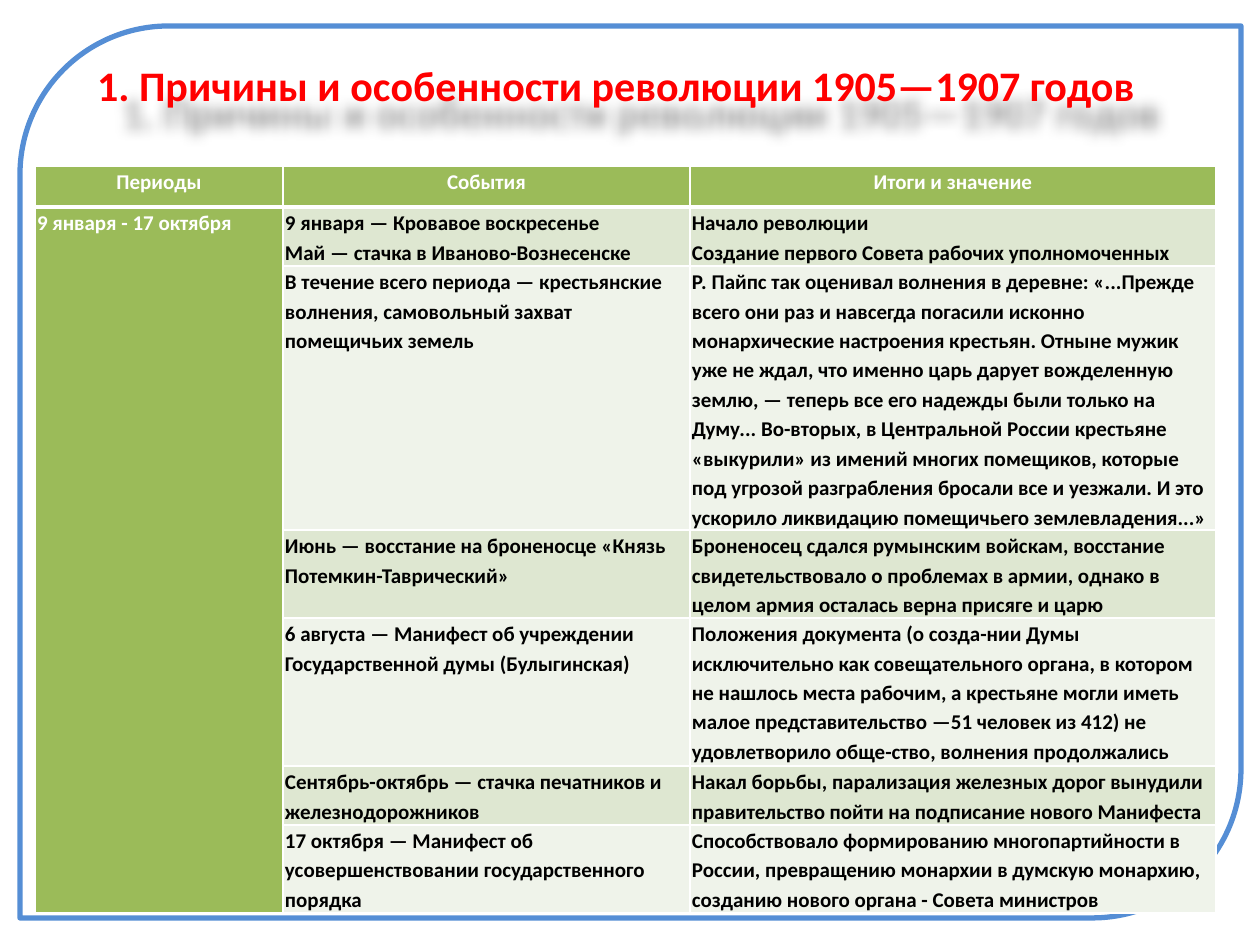
from dataclasses import dataclass

from lxml import etree
from pptx import Presentation
from pptx.dml.color import RGBColor
from pptx.enum.shapes import MSO_SHAPE
from pptx.enum.text import MSO_ANCHOR, PP_ALIGN
from pptx.oxml.ns import qn
from pptx.util import Pt

FRAME_SHAPE = MSO_SHAPE.ROUND_2_DIAG_RECTANGLE
CENTER, LEFT = PP_ALIGN.CENTER, PP_ALIGN.LEFT
MIDDLE = MSO_ANCHOR.MIDDLE

TITLE = "1. Причины и особенности революции 1905—1907 годов"
HEADERS = ["Периоды", "События", "Итоги и значение"]
PERIOD = "9 января - 17 октября"
EVENTS = [  # event, outcome; a line break starts a new paragraph
    ("9 января — Кровавое воскресенье\nМай — стачка в Иваново-Вознесенске",
     "Начало революции\nСоздание первого Совета рабочих уполномоченных"),
    ("В течение всего периода — крестьянские волнения, самовольный захват "
     "помещичьих земель",
     "Р. Пайпс так оценивал волнения в деревне: «...Прежде всего они раз и "
     "навсегда погасили исконно монархические настроения крестьян. Отныне мужик "
     "уже не ждал, что именно царь дарует вожделенную землю, — теперь все его "
     "надежды были только на Думу... Во-вторых, в Центральной России крестьяне "
     "«выкурили» из имений многих помещиков, которые под угрозой разграбления "
     "бросали все и уезжали. И это ускорило ликвидацию помещичьего "
     "землевладения...»"),
    ("Июнь — восстание на броненосце «Князь Потемкин-Таврический»",
     "Броненосец сдался румынским войскам, восстание свидетельствовало о "
     "проблемах в армии, однако в целом армия осталась верна присяге и царю"),
    ("6 августа — Манифест об учреждении Государственной думы (Булыгинская)",
     "Положения документа (о созда-нии Думы исключительно как совещательного "
     "органа, в котором не нашлось места рабочим, а крестьяне могли иметь малое "
     "представительство —51 человек из 412) не удовлетворило обще-ство, "
     "волнения продолжались"),
    ("Сентябрь-октябрь — стачка печатников и железнодорожников",
     "Накал борьбы, парализация железных дорог вынудили правительство пойти на "
     "подписание нового Манифеста"),
    ("17 октября — Манифест об усовершенствовании государственного порядка",
     "Способствовало формированию многопартийности в России, превращению "
     "монархии в думскую монархию, созданию нового органа - Совета министров"),
]

# Geometry in px, 126 px to the inch
SLIDE = (1260, 945)
FRAME_BOX = (20, 26, 1221, 892)
TITLE_BOX = (49, 45, 1134, 79)
TABLE_ORIGIN = (35, 166)
COLUMNS = [248, 407, 526]
HEADER_HEIGHT = 41
EVENT_HEIGHTS = [59, 264, 88, 148, 59, 88]
CELL_INSET = 2


@dataclass(frozen=True)
class Theme:
    font: str = "Calibri"
    title_size: int = 24
    table_size: int = 12
    line_spacing: float = 1.15
    title: str = "FF0000"
    frame: str = "558ED5"
    accent: str = "9BBB59"
    bands: tuple = ("DEE7D1", "EFF3EA")
    light: str = "FFFFFF"
    dark: str = "000000"


THEME = Theme()


def px(value):
    return round(value * 914400 / 126)


def rgb(color):
    return RGBColor.from_string(color)


def write(text_frame, text, size, color, align, spacing=1.0):
    text_frame.word_wrap = True
    text_frame.text = text
    for paragraph in text_frame.paragraphs:
        paragraph.alignment = align
        paragraph.line_spacing = spacing
        paragraph.font.name = THEME.font
        paragraph.font.size = Pt(size)
        paragraph.font.bold = True
        paragraph.font.color.rgb = rgb(color)


def add_soft_shadow(shape):
    effects = etree.SubElement(shape._element.spPr, qn("a:effectLst"))
    shadow = etree.SubElement(
        effects, qn("a:outerShdw"), blurRad=str(px(14)), dist=str(px(36)),
        dir=str(48 * 60000), algn="tl", rotWithShape="0")
    color = etree.SubElement(shadow, qn("a:srgbClr"), val=THEME.dark)
    etree.SubElement(color, qn("a:alpha"), val="40000")


def add_borders(cell, top, bottom):
    properties = cell._tc.get_or_add_tcPr()
    for side, width in (("L", 1), ("R", 1), ("T", top), ("B", bottom)):
        line = etree.SubElement(properties, qn(f"a:ln{side}"), w=str(Pt(width)))
        fill = etree.SubElement(line, qn("a:solidFill"))
        etree.SubElement(fill, qn("a:srgbClr"), val=THEME.light)


def style_cell(cell, text, fill, color, align=LEFT, top=1, bottom=1):
    cell.margin_left = cell.margin_right = px(CELL_INSET)
    cell.margin_top = cell.margin_bottom = 0
    add_borders(cell, top, bottom)
    cell.fill.solid()
    cell.fill.fore_color.rgb = rgb(fill)
    write(cell.text_frame, text, THEME.table_size, color, align, THEME.line_spacing)


def add_frame(slide):
    frame = slide.shapes.add_shape(FRAME_SHAPE, *map(px, FRAME_BOX))
    frame.shadow.inherit = False
    frame.fill.background()
    frame.line.color.rgb = rgb(THEME.frame)
    frame.line.width = Pt(3)


def add_title(slide):
    title = slide.shapes.add_textbox(*map(px, TITLE_BOX))
    title.text_frame.vertical_anchor = MIDDLE
    write(title.text_frame, TITLE, THEME.title_size, THEME.title, CENTER)
    add_soft_shadow(title)


def add_events_table(slide):
    heights = [HEADER_HEIGHT, *EVENT_HEIGHTS]
    size = (sum(COLUMNS), sum(heights))
    table = slide.shapes.add_table(
        len(heights), len(COLUMNS), *map(px, TABLE_ORIGIN + size)).table
    for column, width in zip(table.columns, COLUMNS):
        column.width = px(width)
    for row, height in zip(table.rows, heights):
        row.height = px(height)

    for col, header in enumerate(HEADERS):
        style_cell(table.cell(0, col), header, THEME.accent, THEME.light,
                   CENTER, bottom=3)
    for row, event in enumerate(EVENTS, start=1):
        top = 3 if row == 1 else 1
        style_cell(table.cell(row, 0), PERIOD if row == 1 else "",
                   THEME.accent, THEME.light, top=top)
        band = THEME.bands[(row - 1) % len(THEME.bands)]
        for col, text in enumerate(event, start=1):
            style_cell(table.cell(row, col), text, band, THEME.dark, top=top)
    table.cell(1, 0).merge(table.cell(len(EVENTS), 0))


def main():
    prs = Presentation()
    prs.slide_width, prs.slide_height = map(px, SLIDE)
    slide = prs.slides.add_slide(prs.slide_layouts[6])
    add_frame(slide)
    add_title(slide)
    add_events_table(slide)
    prs.save("out.pptx")


if __name__ == "__main__":
    main()
